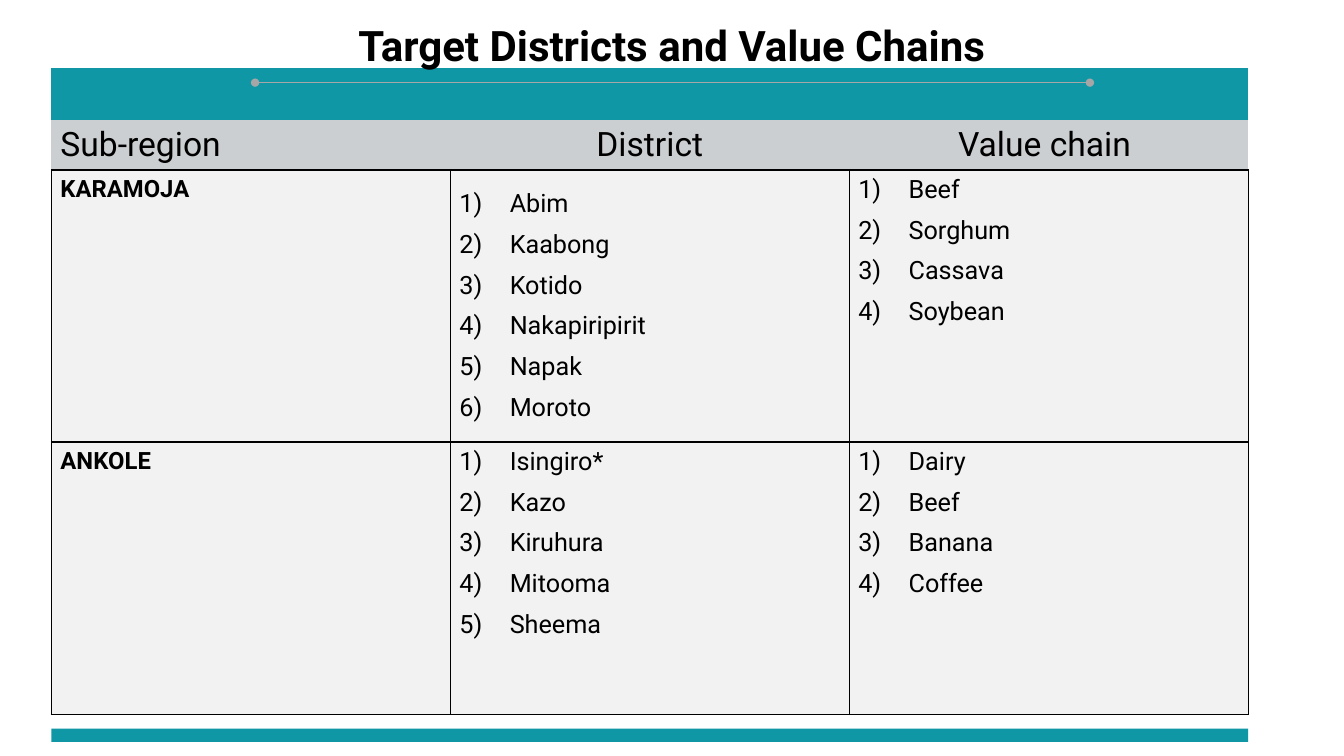
from lxml.etree import SubElement
from pptx import Presentation
from pptx.dml.color import RGBColor
from pptx.enum.shapes import MSO_CONNECTOR, MSO_SHAPE
from pptx.enum.text import MSO_ANCHOR, PP_ALIGN
from pptx.oxml import parse_xml
from pptx.oxml.ns import nsdecls, qn
from pptx.util import Inches, Pt

COLORS = {"teal": "0F97A6", "header": "CCCFD1", "body": "F2F2F2",
          "text": "000000", "border": "000000", "line": "A6A6A6"}
FONT = "Roboto"
HEADINGS = ["Sub-region", "District", "Value chain "]
REGIONS = [
    ("KARAMOJA",
     ["Abim", "Kaabong", "Kotido", "Nakapiripirit", "Napak", "Moroto"],
     ["Beef", "Sorghum", "Cassava", "Soybean"]),
    ("ANKOLE",
     ["Isingiro*", "Kazo", "Kiruhura", "Mitooma", "Sheema"],
     ["Dairy", "Beef", "Banana", "Coffee"]),
]
LEFT, WIDTH = 0.51, 11.87
ROW_HEIGHTS = [0.49, 0.49, 2.7, 2.7]


def write_lines(text_frame, lines, size, bold=False, align=PP_ALIGN.LEFT, numbered=False):
    for index, line in enumerate(lines):
        paragraph = text_frame.paragraphs[0] if index == 0 else text_frame.add_paragraph()
        paragraph.alignment = align
        run = paragraph.add_run()
        run.text = line
        formats = {"name": FONT, "size": Pt(size), "bold": bold}
        for name, value in formats.items():
            setattr(run.font, name, value)
        run.font.color.rgb = RGBColor.from_string(COLORS["text"])
        if numbered:
            paragraph.space_after = Pt(8)
            properties = paragraph._p.get_or_add_pPr()
            properties.set("marL", str(Inches(0.5)))
            properties.set("indent", str(Inches(-0.5)))
            SubElement(properties, qn("a:buFont"), typeface="+mj-lt")
            SubElement(properties, qn("a:buAutoNum"), type="arabicParenR")


def format_cell(cell, fill, sides, anchor):
    formats = {"margin_left": Inches(0.09), "margin_right": Inches(0.09),
               "margin_top": Inches(0.05), "margin_bottom": Inches(0.05),
               "vertical_anchor": anchor}
    for name, value in formats.items():
        setattr(cell, name, value)
    cell.fill.solid()
    cell.fill.fore_color.rgb = RGBColor.from_string(COLORS[fill])
    for index, side in enumerate(sides):
        border = parse_xml(
            f'<a:ln{side} {nsdecls("a")} w="{Pt(1)}"><a:solidFill>'
            f'<a:srgbClr val="{COLORS["border"]}"/></a:solidFill></a:ln{side}>')
        cell._tc.get_or_add_tcPr().insert(index, border)


presentation = Presentation()
presentation.slide_width = Inches(13.33)
presentation.slide_height = Inches(7.5)
slide = presentation.slides.add_slide(presentation.slide_layouts[6])

table = slide.shapes.add_table(
    len(ROW_HEIGHTS), len(HEADINGS), Inches(LEFT), Inches(0.67),
    Inches(WIDTH), Inches(sum(ROW_HEIGHTS))).table
table.first_row = False
table.horz_banding = False
table._tbl.tblPr.find(qn("a:tableStyleId")).text = "{2D5ABB26-0587-4C30-8999-92F81FD0307C}"
for column in table.columns:
    column.width = Inches(WIDTH / len(HEADINGS))
for row, height in zip(table.rows, ROW_HEIGHTS):
    row.height = Inches(height)

band = table.cell(0, 0)
band.merge(table.cell(0, 2))
format_cell(band, "teal", "", MSO_ANCHOR.TOP)
band_end = SubElement(band.text_frame.paragraphs[0]._p, qn("a:endParaRPr"), sz="2600")
SubElement(band_end, qn("a:latin"), typeface=FONT)

for column_index, heading in enumerate(HEADINGS):
    cell = table.cell(1, column_index)
    format_cell(cell, "header", "B", MSO_ANCHOR.MIDDLE)
    align = PP_ALIGN.CENTER if column_index else PP_ALIGN.LEFT
    write_lines(cell.text_frame, [heading], 24, align=align)

for row_index, (region, districts, value_chains) in enumerate(REGIONS, start=2):
    for column_index, lines in enumerate([[region], districts, value_chains]):
        cell = table.cell(row_index, column_index)
        centred = (row_index, column_index) == (2, 1)
        format_cell(cell, "body", "LRTB", MSO_ANCHOR.MIDDLE if centred else MSO_ANCHOR.TOP)
        if column_index == 0:
            write_lines(cell.text_frame, lines, 17, bold=True)
        else:
            write_lines(cell.text_frame, lines, 18, numbered=True)

title = slide.shapes.add_textbox(0, Inches(0.14), Inches(13.33), Inches(0.61))
title.text_frame.word_wrap = True
write_lines(title.text_frame, ["Target Districts and Value Chains"], 30,
            bold=True, align=PP_ALIGN.CENTER)

rule = slide.shapes.add_connector(
    MSO_CONNECTOR.STRAIGHT, Inches(2.53), Inches(0.82), Inches(10.81), Inches(0.82))
rule.line.color.rgb = RGBColor.from_string(COLORS["line"])
rule.line.width = Pt(0.5)
for end in ("a:headEnd", "a:tailEnd"):
    SubElement(rule.line._get_or_add_ln(), qn(end), type="oval")
SubElement(rule._element.spPr, qn("a:effectLst"))

footer = slide.shapes.add_shape(
    MSO_SHAPE.RECTANGLE, Inches(LEFT), Inches(7.23), Inches(WIDTH), Inches(0.13))
footer.shadow.inherit = False
footer.fill.solid()
footer.fill.fore_color.rgb = RGBColor.from_string(COLORS["teal"])
footer.line.fill.background()

presentation.save("out.pptx")
